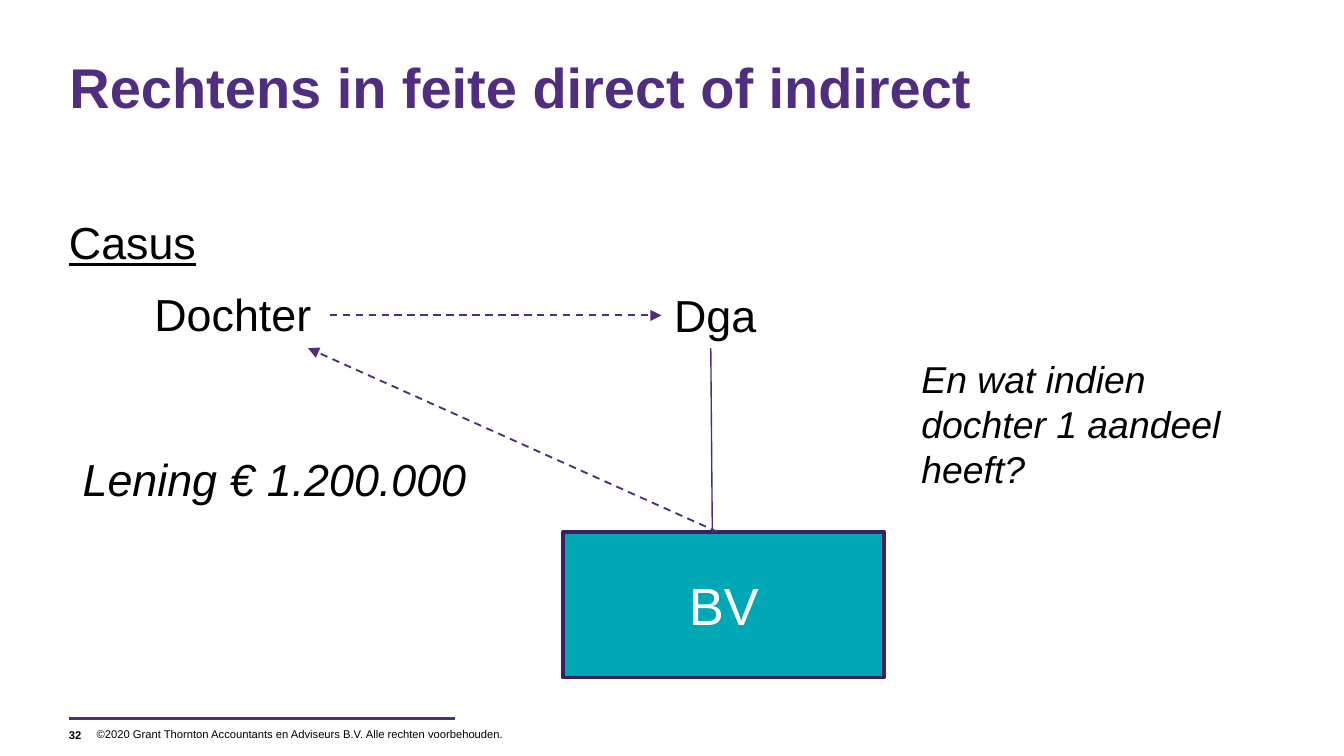
from pptx import Presentation
from pptx.util import Pt
from pptx.dml.color import RGBColor
from pptx.enum.dml import MSO_LINE as Dash
from pptx.enum.shapes import MSO_CONNECTOR as Conn, MSO_SHAPE as Shape
from pptx.enum.text import MSO_ANCHOR as Anchor, PP_ALIGN as Align
from pptx.oxml.ns import qn
from lxml.etree import SubElement as Sub


def color(code):
    return RGBColor.from_string(code)


def write(shape, text, size, code="000000", pad=(7.2, 3.6), mid=False,
          wrap=True, bold=False, ital=False, line=False):
    frame = shape.text_frame
    frame.word_wrap = wrap
    frame.margin_left = frame.margin_right = Pt(pad[0])
    frame.margin_top = frame.margin_bottom = Pt(pad[1])
    frame.vertical_anchor = Anchor.MIDDLE if mid else Anchor.TOP
    run = frame.paragraphs[0].add_run()
    run.text = text
    font = run.font
    font.name, font.size = "Arial", Pt(size)
    font.bold, font.italic, font.underline = bold, ital, line
    font.color.rgb = color(code)


deck = Presentation()
deck.slide_width, deck.slide_height = Pt(720), Pt(405)
slide = deck.slides.add_slide(deck.slide_layouts[6])
shapes = slide.shapes
PURPLE = "4F2D7F"

# Title, heading, case labels and footer
flush = {"pad": (0, 0)}
texts = [
    ((37.2, 28, 646, 66), "Rechtens in feite direct of indirect", 30,
     {"code": PURPLE, "bold": True, **flush}),
    ((36.9, 115.2, 646, 254), "Casus", 24, {"line": True, **flush}),
    ((75.6, 150, 115, 36), "Dochter", 24, {}),
    ((354, 150.5, 120, 36), "Dga", 24, {}),
    ((37.2, 238.5, 222.5, 36), "Lening € 1.200.000", 24,
     {"ital": True, "wrap": False}),
    ((486.5, 187.5, 179, 80), "En wat indien dochter 1 aandeel heeft?", 20,
     {"ital": True}),
    ((36.9, 386.6, 14.4, 14.4), "32", 6,
     {"bold": True, "mid": True, **flush}),
    ((51.8, 386.2, 237, 14.4),
     "©2020 Grant Thornton Accountants en Adviseurs B.V. "
     "Alle rechten voorbehouden.", 6, {"mid": True, "pad": (0, 3.6)}),
]
for spot, text, size, style in texts:
    box = shapes.add_textbox(*map(Pt, spot))
    write(box, text, size, **style)

# Company box
firm = shapes.add_shape(Shape.RECTANGLE, Pt(301.8), Pt(285), Pt(172), Pt(78))
firm.shadow.inherit = False
firm.fill.solid()
firm.fill.fore_color.rgb = color("00A7B5")
firm.line.color.rgb = color("3A215E")
firm.line.width = Pt(2)
write(firm, "BV", 28, "FFFFFF", mid=True)
firm.text_frame.paragraphs[0].alignment = Align.CENTER

# Footer rule, ownership line, and dashed arrows for loan and family tie
lines = [
    ((36.9, 385, 244, 385), PURPLE, 1.5, False),
    ((380.8, 186.5, 381.6, 285.5), "4D2A7E", 0.75, False),
    ((384.5, 285, 165, 186.5), PURPLE, 1, True),
    ((176.6, 169, 354.4, 169), PURPLE, 1, True),
]
for ends, code, width, arrow in lines:
    link = shapes.add_connector(Conn.STRAIGHT, *map(Pt, ends))
    link.line.color.rgb = color(code)
    link.line.width = Pt(width)
    if arrow:
        link.line.dash_style = Dash.DASH
        Sub(link.line._get_or_add_ln(), qn("a:tailEnd"), type="triangle")
    Sub(link._element.spPr, qn("a:effectLst"))

deck.save("out.pptx")
